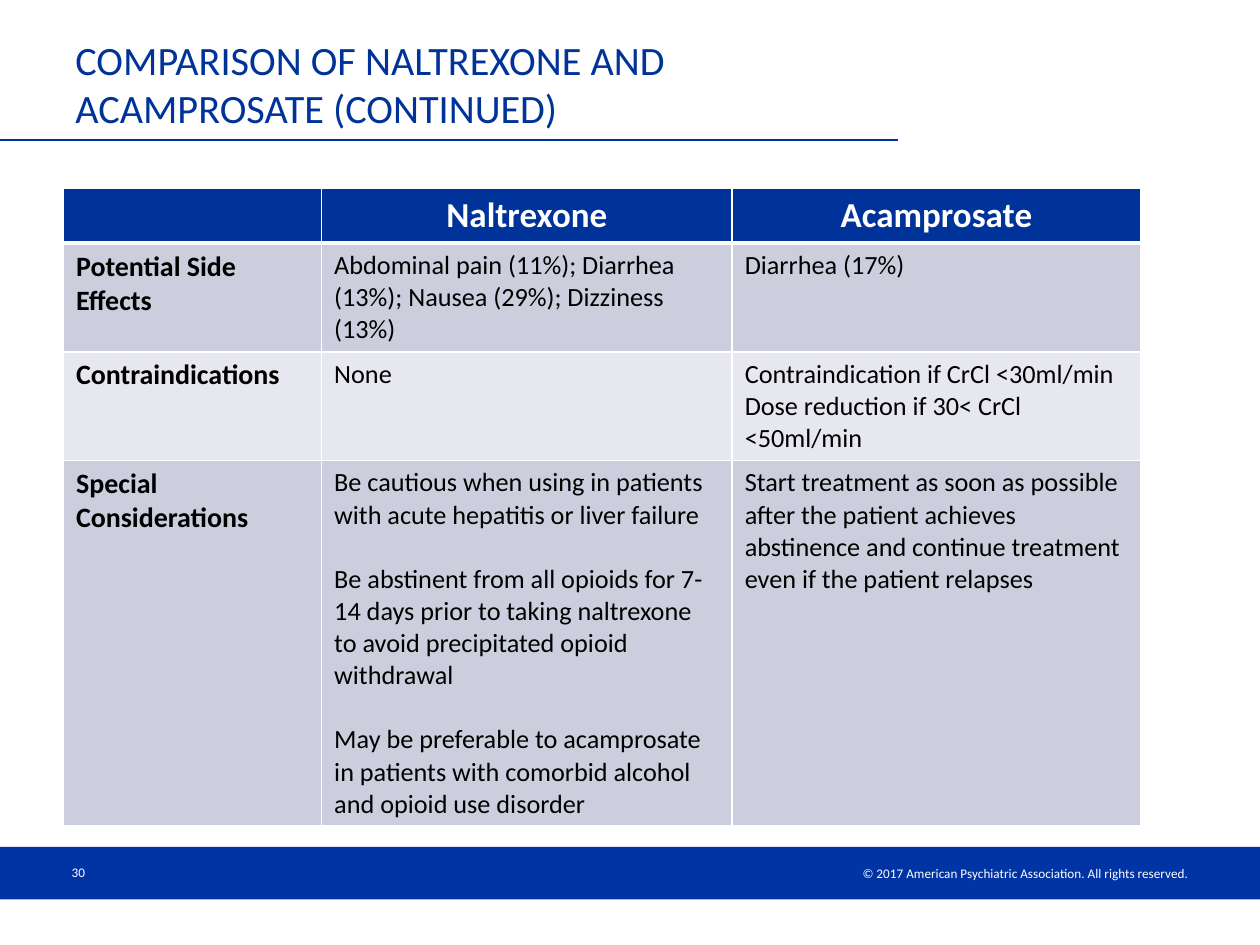
from lxml import etree
from pptx import Presentation
from pptx.dml.color import RGBColor
from pptx.enum.shapes import MSO_CONNECTOR, MSO_SHAPE
from pptx.enum.text import MSO_ANCHOR, PP_ALIGN
from pptx.oxml.ns import qn
from pptx.util import Pt

LEFT, CENTER, RIGHT = PP_ALIGN.LEFT, PP_ALIGN.CENTER, PP_ALIGN.RIGHT
MIDDLE, TOP = MSO_ANCHOR.MIDDLE, MSO_ANCHOR.TOP
NAVY, BAND, WHITE, BLACK = "003399", "0033A3", "FFFFFF", "000000"
ROW_FILLS = ["CCCEDE", "E7E8EF"]

# Text formats
TITLE = {"size": Pt(23), "color": NAVY}
FOOTER = {"size": Pt(7.5), "color": WHITE}
HEADER = {"size": Pt(20), "color": WHITE, "bold": True}
LABEL = {"size": Pt(16), "color": BLACK, "bold": True}
BODY = {"size": Pt(15), "color": BLACK, "bold": False}
BODY_LINE = 18.3

COLUMNS = [147.5, 234.6, 233.4]
ROWS = [
    # height, gap between paragraphs, cells
    (31.6, 0, [[], ["Naltrexone"], ["Acamprosate"]]),
    (62.2, 0, [
        ["Potential Side Effects"],
        ["Abdominal pain (11%); Diarrhea (13%); Nausea (29%); Dizziness (13%)"],
        ["Diarrhea (17%)"]]),
    (62.2, 0, [
        ["Contraindications"],
        ["None"],
        ["Contraindication if CrCl <30ml/min",
         "Dose reduction if 30< CrCl <50ml/min"]]),
    (208.8, BODY_LINE, [
        ["Special Considerations"],
        ["Be cautious when using in patients with acute hepatitis or liver failure",
         "Be abstinent from all opioids for 7-14 days prior to taking naltrexone "
         "to avoid precipitated opioid withdrawal",
         "May be preferable to acamprosate in patients with comorbid alcohol "
         "and opioid use disorder"],
        ["Start treatment as soon as possible after the patient achieves "
         "abstinence and continue treatment even if the patient relapses"]]),
]


def rgb(value):
    return RGBColor.from_string(value)


def write(tf, paragraphs, fmt, align=LEFT, gap=0):
    for i, text in enumerate(paragraphs):
        p = tf.add_paragraph() if i else tf.paragraphs[0]
        p.alignment = align
        if i and gap:
            p.space_before = Pt(gap)
        r = p.add_run()
        r.text = text
        r.font.name = "Calibri"
        for name, value in fmt.items():
            if name == "color":
                r.font.color.rgb = rgb(value)
            else:
                setattr(r.font, name, value)


def add_text(s, box, text, fmt, align=LEFT, inset=7.2):
    tf = s.shapes.add_textbox(*map(Pt, box)).text_frame
    tf.word_wrap = True
    tf.vertical_anchor = MIDDLE
    tf.margin_left = tf.margin_right = Pt(inset)
    write(tf, [text], fmt, align)


def add_title(s, x, y, w, h):
    add_text(s, (x, y, w, h),
             "COMPARISON OF NALTREXONE AND ACAMPROSATE (CONTINUED)", TITLE)
    # Rule from the slide edge to the end of the title
    rule_y = Pt(80)
    rule = s.shapes.add_connector(
        MSO_CONNECTOR.STRAIGHT, 0, rule_y, Pt(x + w), rule_y)
    rule.line.color.rgb = rgb(NAVY)
    rule.line.width = Pt(0.75)
    etree.SubElement(rule._element.spPr, qn("a:effectLst"))


def add_footer(s, x, y, w, h):
    sp = s.shapes.add_shape(MSO_SHAPE.RECTANGLE, *map(Pt, (x, y, w, h)))
    sp.shadow.inherit = False
    sp.fill.solid()
    sp.fill.fore_color.rgb = rgb(BAND)
    sp.line.fill.background()
    # Page number and copyright line
    add_text(s, (x + 36, y, 168, 29), "30", FOOTER, inset=5)
    add_text(s, (x + 373, y + 6.5, 313, 16.5),
             "© 2017 American Psychiatric Association. All rights reserved.",
             FOOTER, RIGHT)


def set_borders(cell, bottom):
    tcPr = cell._tc.get_or_add_tcPr()
    widths = {"a:lnL": 1, "a:lnR": 1, "a:lnT": 1, "a:lnB": bottom}
    for i, (tag, width) in enumerate(widths.items()):
        ln = etree.Element(qn(tag), w=str(Pt(width)))
        fill = etree.SubElement(ln, qn("a:solidFill"))
        etree.SubElement(fill, qn("a:srgbClr"), val=WHITE)
        tcPr.insert(i, ln)


def add_comparison(s, x, y):
    width, height = sum(COLUMNS), sum(row[0] for row in ROWS)
    table = s.shapes.add_table(
        len(ROWS), len(COLUMNS), *map(Pt, (x, y, width, height))).table
    for column, w in zip(table.columns, COLUMNS):
        column.width = Pt(w)
    for i, (h, gap, cells) in enumerate(ROWS):
        table.rows[i].height = Pt(h)
        for j, paragraphs in enumerate(cells):
            cell = table.cell(i, j)
            cell.vertical_anchor = TOP
            cell.fill.solid()
            cell.fill.fore_color.rgb = rgb(ROW_FILLS[(i - 1) % 2] if i else NAVY)
            # Heavier line under the header, and above the row it meets
            set_borders(cell, 1 if i else 3)
            fmt = HEADER if i == 0 else BODY if j else LABEL
            write(cell.text_frame, paragraphs, fmt, LEFT if i else CENTER, gap)


def main():
    prs = Presentation()
    prs.slide_width, prs.slide_height = Pt(720), Pt(540)
    s = prs.slides.add_slide(prs.slide_layouts[6])
    add_footer(s, 0, 484, 720, 30)
    add_title(s, 36, 24.5, 477, 46)
    add_comparison(s, 36.3, 107.3)
    prs.save("out.pptx")


if __name__ == "__main__":
    main()
